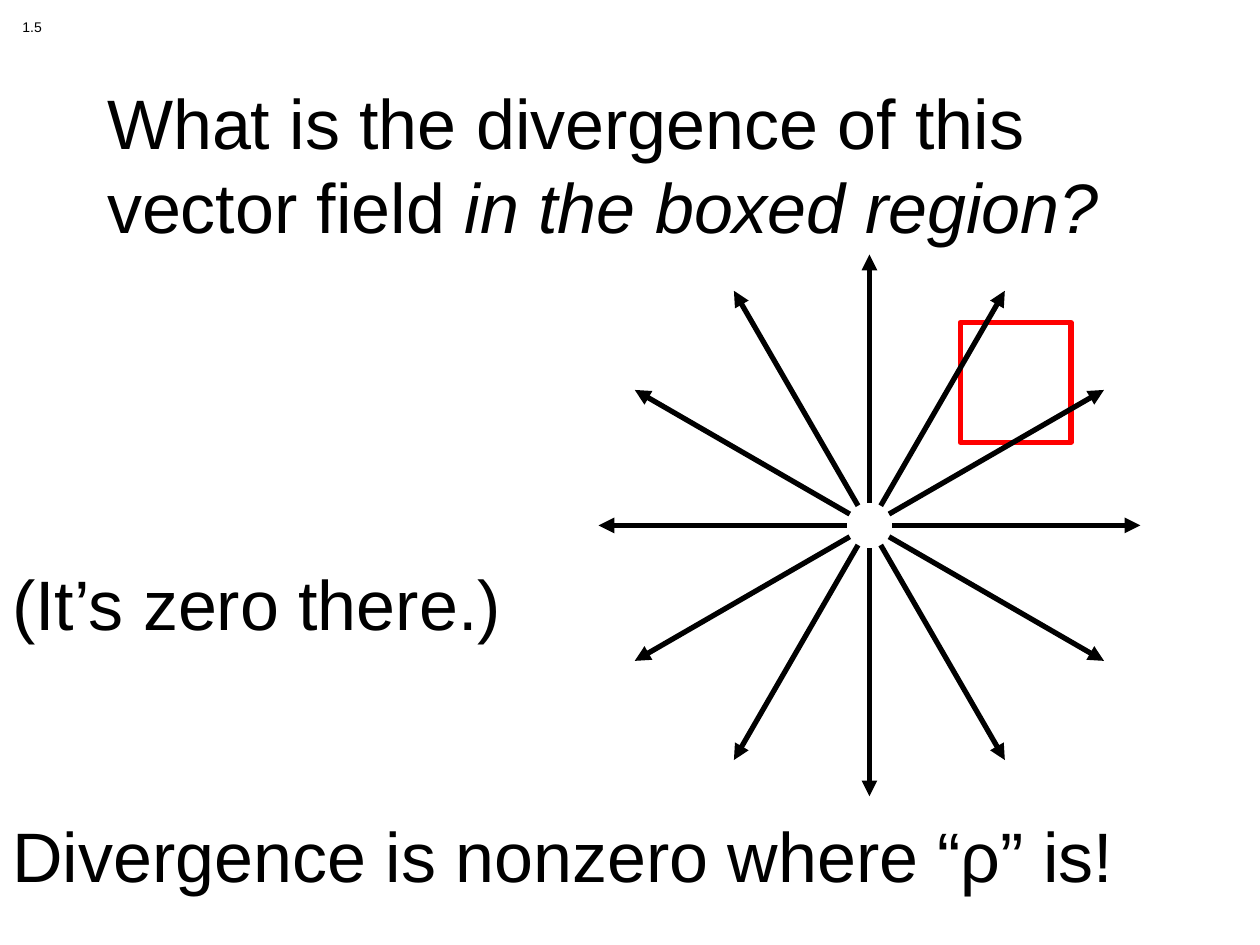
from dataclasses import dataclass
from math import cos, radians, sin

from lxml import etree
from pptx import Presentation
from pptx import util as u
from pptx.dml.color import RGBColor
from pptx.enum import shapes, text
from pptx.oxml.ns import qn


@dataclass(frozen=True)
class Theme:
    """Colours, font, type sizes and line width of the slide."""

    ink: RGBColor = RGBColor(0x00, 0x00, 0x00)
    region: RGBColor = RGBColor(0xFF, 0x00, 0x00)
    font: str = "Arial"
    large: u.Pt = u.Pt(40)
    small: u.Pt = u.Pt(8)
    stroke: u.Pt = u.Pt(3)


THEME = Theme()


def apply(target, values):
    """Set every attribute in values on target."""
    for name, value in values.items():
        setattr(target, name, value)


def place(shape, left, top, width, height):
    """Move and size a shape, in inches."""
    bounds = {"left": left, "top": top, "width": width, "height": height}
    apply(shape, {name: u.Inches(value) for name, value in bounds.items()})


def add_run(paragraph, wording, size, italic=None):
    """Append formatted text to a paragraph."""
    run = paragraph.add_run()
    run.text = wording
    apply(run.font, {"name": THEME.font, "size": size, "italic": italic})
    run.font.color.rgb = THEME.ink


def set_question(title, parts):
    """Fill the title from (wording, italic) parts."""
    place(title, 0.75, 0.67, 8.5, 1.25)
    apply(title.text_frame, {
        "word_wrap": True,
        "vertical_anchor": text.MSO_ANCHOR.MIDDLE,
        "auto_size": text.MSO_AUTO_SIZE.NONE,
    })
    paragraph = title.text_frame.paragraphs[0]
    apply(paragraph, {"alignment": text.PP_ALIGN.LEFT, "line_spacing": 1.0})
    for wording, italic in parts:
        add_run(paragraph, wording, THEME.large, italic)


def add_note(slide, bounds, lines, size, gap=0):
    """Add a text box whose paragraphs are gap points apart."""
    frame = slide.shapes.add_textbox(*map(u.Inches, bounds)).text_frame
    frame.word_wrap = True
    for index, wording in enumerate(lines):
        paragraph = frame.paragraphs[0] if index == 0 else frame.add_paragraph()
        paragraph.space_before = u.Pt(gap if index else 0)
        add_run(paragraph, wording, size)


def add_region(slide, *bounds):
    """Outline the boxed region."""
    region = slide.shapes.add_shape(
        shapes.MSO_SHAPE.RECTANGLE, *map(u.Inches, bounds))
    region.shadow.inherit = False
    region.fill.background()
    region.line.color.rgb = THEME.region
    region.line.width = THEME.stroke


def add_arrow(field, start, end):
    """Add a straight arrow to the field group."""
    arrow = field.shapes.add_connector(
        shapes.MSO_CONNECTOR.STRAIGHT, *map(u.Inches, (*start, *end)))
    arrow.line.color.rgb = THEME.ink
    arrow.line.width = THEME.stroke
    etree.SubElement(arrow.line._get_or_add_ln(), qn("a:tailEnd"), type="triangle")
    etree.SubElement(arrow._element.spPr, qn("a:effectLst"))


def add_radial_field(slide, centre, inner, outer, count):
    """Draw equally spaced arrows pointing away from the centre."""
    field = slide.shapes.add_group_shape()
    for step in range(count):
        angle = radians(360 * step / count)
        start, end = (
            (centre[0] + radius * cos(angle), centre[1] - radius * sin(angle))
            for radius in (inner, outer))
        add_arrow(field, start, end)


def main():
    """Build and save the divergence slide."""
    deck = Presentation()
    apply(deck, {"slide_width": u.Inches(10), "slide_height": u.Inches(7.5)})
    slide = deck.slides.add_slide(deck.slide_layouts[5])
    set_question(slide.shapes.title, [
        ("What is the divergence of this vector field ", None),
        ("in the boxed region?", True),
    ])
    add_region(slide, 7.62, 2.56, 0.88, 0.95)
    add_note(slide, (0, 4.4, 10, 2.79),
             ["(It’s zero there.)", "Divergence is nonzero where “ρ” is!"],
             THEME.large, gap=96)
    add_note(slide, (0.08, 0.1, 0.39, 0.23), ["1.5"], THEME.small)
    add_radial_field(slide, centre=(6.9, 4.17), inner=0.18, outer=2.15, count=12)
    deck.save("out.pptx")


if __name__ == "__main__":
    main()
